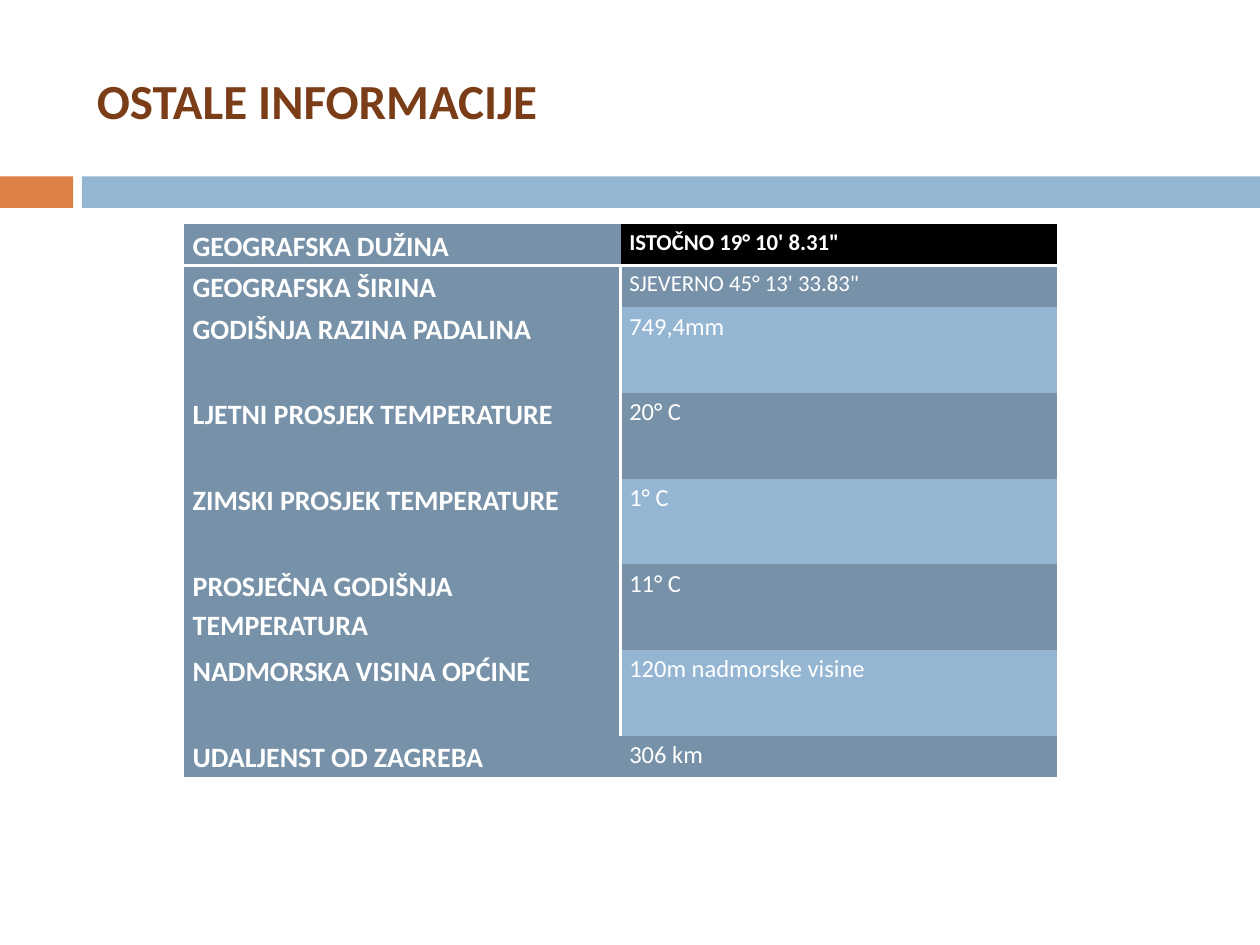
from lxml.etree import SubElement
from pptx import Presentation
from pptx.dml.color import RGBColor
from pptx.enum.shapes import MSO_SHAPE
from pptx.enum.text import MSO_ANCHOR
from pptx.oxml.ns import qn
from pptx.util import Inches, Pt

COLORS = {
    "white": "FFFFFF", "black": "000000", "title": "7B3D17",
    "accent": "DD8047", "light": "94B6D2", "dark": "7792A8",
}
NO_STYLE = "{2D5ABB26-0587-4C30-8999-92F81FD0307C}"
FACTS = [
    ("GEOGRAFSKA DUŽINA", "ISTOČNO 19° 10' 8.31\"", 1),
    ("GEOGRAFSKA ŠIRINA", "SJEVERNO 45° 13' 33.83\"", 1),
    ("GODIŠNJA RAZINA PADALINA", "749,4mm", 2),
    ("LJETNI PROSJEK TEMPERATURE", "20° C", 2),
    ("ZIMSKI PROSJEK TEMPERATURE", "1° C", 2),
    ("PROSJEČNA GODIŠNJA TEMPERATURA", "11° C", 2),
    ("NADMORSKA VISINA OPĆINE", "120m nadmorske visine", 2),
    ("UDALJENST OD ZAGREBA", "306 km", 1),
]
ROW_HEIGHTS = {1: 0.33, 2: 0.68}


def color(name):
    return RGBColor.from_string(COLORS[name])


def set_fill(target, name):
    target.fill.solid()
    target.fill.fore_color.rgb = color(name)


def write(paragraph, text, color_name, **font_format):
    paragraph.text = text
    font = paragraph.runs[0].font
    for attribute, value in {"name": "Calibri", **font_format}.items():
        setattr(font, attribute, value)
    font.color.rgb = color(color_name)


def add_border(cell, side):
    line = SubElement(cell._tc.get_or_add_tcPr(), qn(f"a:{side}"), w=str(Pt(2)))
    fill = SubElement(line, qn("a:solidFill"))
    SubElement(fill, qn("a:srgbClr"), val=COLORS["white"])


def add_title(slide, left, top, width, height):
    box = slide.shapes.add_textbox(*map(Inches, (left, top, width, height)))
    box.text_frame.word_wrap = True
    box.text_frame.vertical_anchor = MSO_ANCHOR.MIDDLE
    write(box.text_frame.paragraphs[0], "OSTALE INFORMACIJE", "title", size=Pt(28), bold=True)


def add_band(slide, left, top, width, height):
    accent_width, gap = 0.58, 0.07
    bar_start = accent_width + gap
    for start, length, name in (
        (left, accent_width, "accent"),
        (left + bar_start, width - bar_start, "light"),
    ):
        bar = slide.shapes.add_shape(
            MSO_SHAPE.RECTANGLE, *map(Inches, (start, top, length, height)))
        bar.shadow.inherit = False
        set_fill(bar, name)
        bar.line.fill.background()


def fill_cell(cell, text, fill_name, size, bold):
    cell_format = {
        "margin_left": Inches(0.07), "margin_right": Inches(0.07),
        "margin_top": 0, "margin_bottom": 0,
    }
    for attribute, value in cell_format.items():
        setattr(cell, attribute, value)
    set_fill(cell, fill_name)
    paragraph = cell.text_frame.paragraphs[0]
    paragraph.line_spacing = 1.15
    write(paragraph, text, "white", size=Pt(size), bold=bold)


def add_facts(slide, left, top, width):
    height = sum(ROW_HEIGHTS[lines] for _, _, lines in FACTS)
    frame = slide.shapes.add_table(
        len(FACTS), 2, *map(Inches, (left, top, width, height)))
    table = frame.table
    table._tbl.tblPr.find(qn("a:tableStyleId")).text = NO_STYLE
    table.horz_banding = False
    for column in table.columns:
        column.width = Inches(width / 2)
    for index, (label, value, lines) in enumerate(FACTS):
        table.rows[index].height = Inches(ROW_HEIGHTS[lines])
        label_cell, value_cell = table.cell(index, 0), table.cell(index, 1)
        header = index == 0
        if 0 < index < len(FACTS) - 1:
            add_border(label_cell, "lnR")
        if header:
            add_border(label_cell, "lnB")
            add_border(value_cell, "lnB")
        band = "dark" if index % 2 else "light"
        fill_cell(label_cell, label, "dark", 16, True)
        fill_cell(value_cell, value, "black" if header else band,
                  13 if index < 2 else 14, header)


def main():
    presentation = Presentation()
    presentation.slide_width = Inches(10)
    presentation.slide_height = Inches(7.5)
    slide = presentation.slides.add_slide(presentation.slide_layouts[6])
    add_band(slide, 0, 1.4, 10, 0.25)
    add_title(slide, 0.67, 0.25, 8.92, 1.08)
    add_facts(slide, 1.46, 1.78, 6.93)
    presentation.save("out.pptx")


if __name__ == "__main__":
    main()
